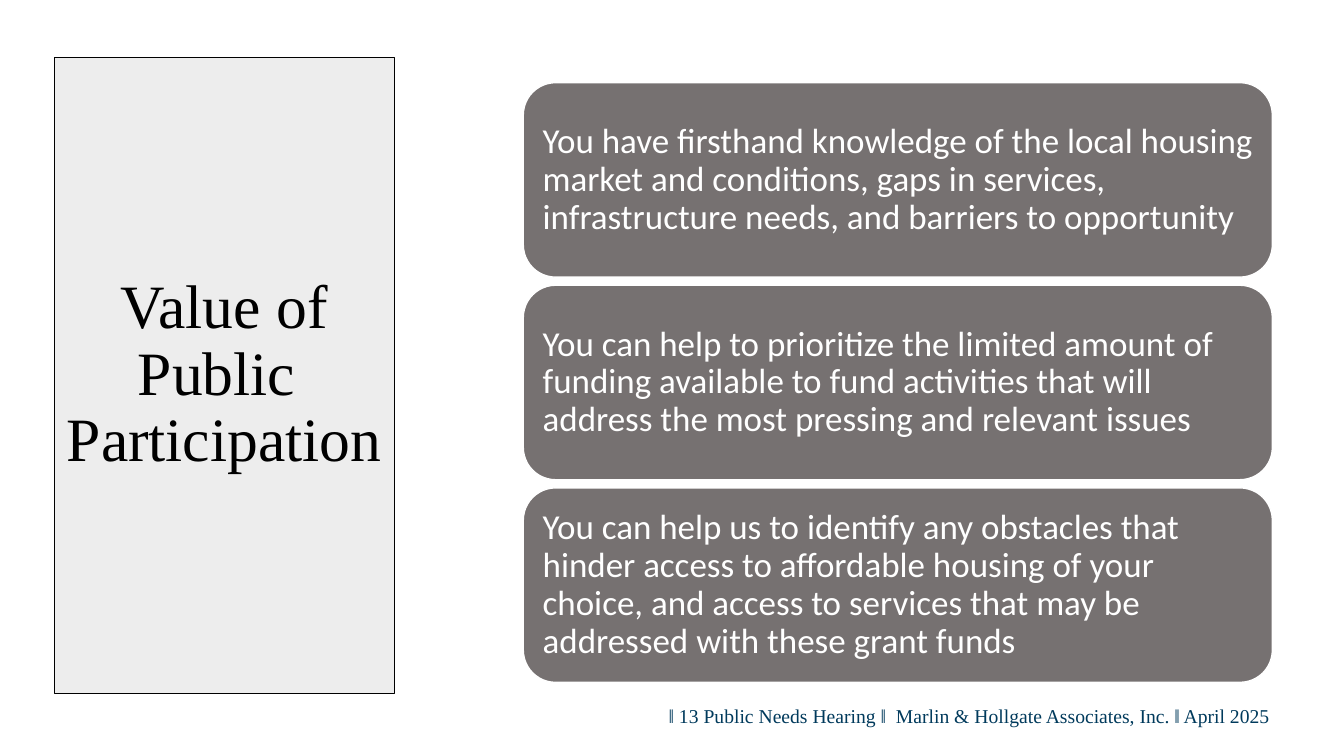
import pptx
import pptx.dml.color
import pptx.enum.shapes
import pptx.enum.text
import pptx.util

RGBColor = pptx.dml.color.RGBColor
PP_ALIGN = pptx.enum.text.PP_ALIGN
MSO_ANCHOR = pptx.enum.text.MSO_ANCHOR

BLACK = RGBColor(0x00, 0x00, 0x00)
WHITE = RGBColor(0xFF, 0xFF, 0xFF)
PALE_GREY = RGBColor(0xED, 0xED, 0xED)
WARM_GREY = RGBColor(0x76, 0x71, 0x71)
NAVY = RGBColor(0x00, 0x3A, 0x5C)

SERIF = "Times New Roman"
SANS = "Calibri"
EMU_PER_PX = 9144  # 100 px to the inch

TITLE = "Value of Public  Participation"
REASONS = [
    "You have firsthand knowledge of the local housing market and conditions, "
    "gaps in services, infrastructure needs, and barriers to opportunity",
    "You can help to prioritize the limited amount of funding available to fund "
    "activities that will address the most pressing and relevant issues",
    "You can help us to identify any obstacles that hinder access to affordable "
    "housing of your choice, and access to services that may be addressed with "
    "these grant funds",
]
FOOTER = "‖ 13 Public Needs Hearing ‖  Marlin & Hollgate Associates, Inc. ‖ April 2025"

CARD_LEFT, CARD_TOP = 519, 82
CARD_WIDTH, CARD_HEIGHT = 743, 193
CARD_STEP = 201


def px(length):
    return pptx.util.Emu(length * EMU_PER_PX)


class SlideBuilder:
    def __init__(self, deck):
        self.page = deck.slides.add_slide(deck.slide_layouts[5])

    def paint(self, shape, fill, line, line_width):
        shape.fill.solid()
        shape.fill.fore_color.rgb = fill
        shape.line.color.rgb = line
        shape.line.width = pptx.util.Pt(line_width)

    def set_text(self, shape, text, font, size, color, align, anchor, spacing=1.0):
        frame = shape.text_frame
        frame.word_wrap = True
        frame.auto_size = pptx.enum.text.MSO_AUTO_SIZE.NONE
        frame.vertical_anchor = anchor
        para = frame.paragraphs[0]
        para.alignment = align
        para.line_spacing = spacing
        span = para.add_run()
        span.text = text
        span.font.name = font
        span.font.size = pptx.util.Pt(size)
        span.font.color.rgb = color

    def title_panel(self, text, left, top, width, height):
        title = self.page.shapes.title
        title.left, title.top = px(left), px(top)
        title.width, title.height = px(width), px(height)
        self.paint(title, PALE_GREY, BLACK, 0.75)
        self.set_text(title, text, SERIF, 44, BLACK,
                      PP_ALIGN.CENTER, MSO_ANCHOR.MIDDLE, 0.9)

    def card(self, text, left, top, width, height):
        card = self.page.shapes.add_shape(
            pptx.enum.shapes.MSO_SHAPE.ROUNDED_RECTANGLE,
            px(left), px(top), px(width), px(height))
        card.shadow.inherit = False
        self.paint(card, WARM_GREY, WHITE, 1)
        frame = card.text_frame
        frame.margin_left = frame.margin_right = px(10)
        frame.margin_top = frame.margin_bottom = px(10)
        self.set_text(card, text, SANS, 25, WHITE,
                      PP_ALIGN.LEFT, MSO_ANCHOR.MIDDLE, 0.9)

    def footer(self, text, left, top, width, height):
        box = self.page.shapes.add_textbox(px(left), px(top), px(width), px(height))
        self.set_text(box, text, SERIF, 14, NAVY, PP_ALIGN.RIGHT, MSO_ANCHOR.TOP)


def main():
    deck = pptx.Presentation()
    deck.slide_width, deck.slide_height = px(1333), px(750)
    builder = SlideBuilder(deck)
    builder.title_panel(TITLE, 54, 57, 337, 631)
    for index, reason in enumerate(REASONS):
        builder.card(reason, CARD_LEFT, CARD_TOP + index * CARD_STEP,
                     CARD_WIDTH, CARD_HEIGHT)
    builder.footer(FOOTER, 223, 693, 1047, 40)
    deck.save("out.pptx")


if __name__ == "__main__":
    main()
